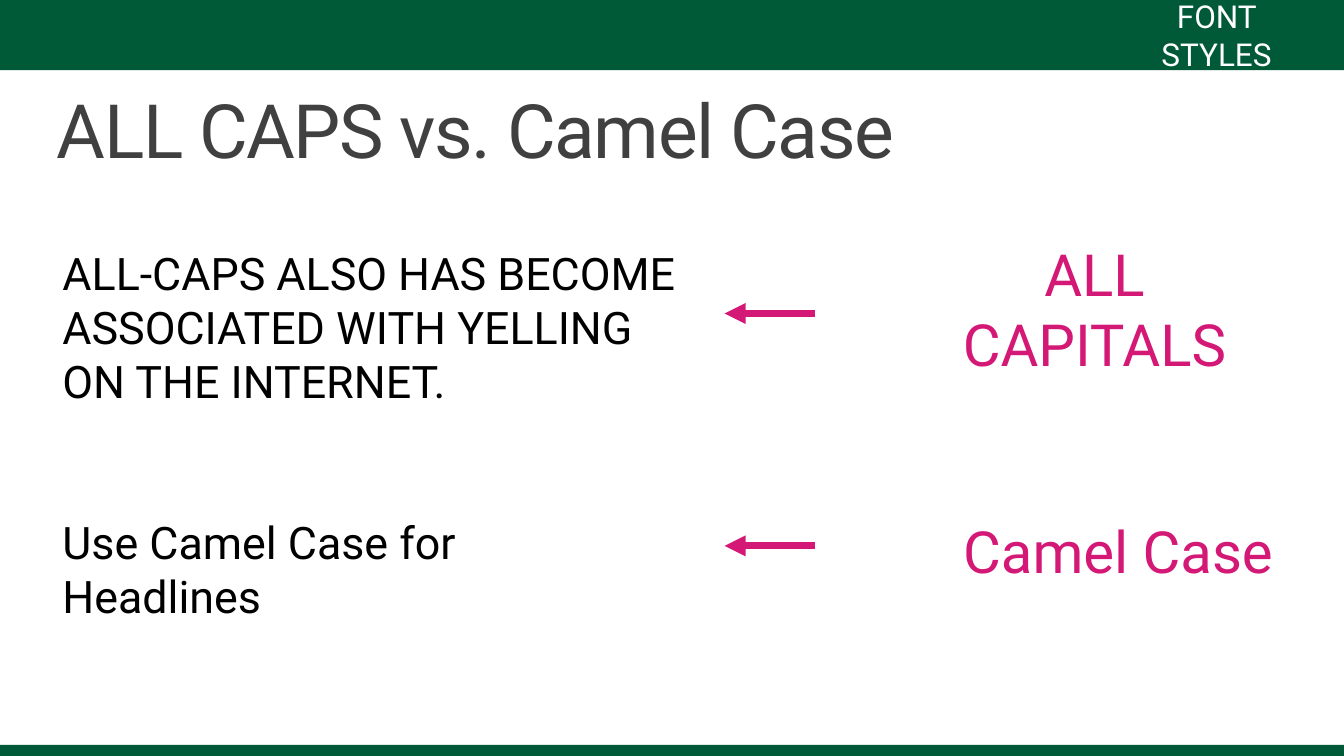
from lxml import etree
from pptx import Presentation
from pptx.dml.color import RGBColor
from pptx.enum.shapes import MSO_CONNECTOR, MSO_SHAPE
from pptx.enum.text import MSO_ANCHOR, MSO_AUTO_SIZE, PP_ALIGN
from pptx.oxml.ns import qn
from pptx.util import Inches, Pt

COLORS = {
    "green": "005A38",
    "pink": "D31876",
    "title": "404040",
    "black": "000000",
    "white": "FFFFFF",
}


def rgb(name):
    return RGBColor.from_string(COLORS[name])


def set_text(sp, text, size, color, align=PP_ALIGN.LEFT, wrap=True):
    tf = sp.text_frame
    tf.text = text
    tf.word_wrap = wrap
    tf.auto_size = MSO_AUTO_SIZE.SHAPE_TO_FIT_TEXT
    tf.vertical_anchor = MSO_ANCHOR.MIDDLE
    tf.margin_left = tf.margin_right = Inches(0.06)
    tf.margin_top = tf.margin_bottom = Inches(0.06)
    p = tf.paragraphs[0]
    p.alignment = align
    p.font.name = "Roboto"
    p.font.size = Pt(size)
    p.font.color.rgb = rgb(color)
    return p


prs = Presentation()
prs.slide_width = Inches(26.67)
prs.slide_height = Inches(15)
s = prs.slides.add_slide(prs.slide_layouts[5])
s.background.fill.solid()
s.background.fill.fore_color.rgb = rgb("white")

# Title
title = s.shapes.title
title.left, title.top = Inches(1.07), Inches(1.76)
title.width, title.height = Inches(24.28), Inches(1.92)
p = set_text(title, "ALL CAPS vs. Camel Case", 107, "title")
p.line_spacing = 0.8
p.runs[0].font._element.set("spc", "-210")

# Header and footer bars
for top, height in [(0, 1.39), (14.78, 0.22)]:
    bar = s.shapes.add_shape(
        MSO_SHAPE.RECTANGLE, 0, Inches(top), prs.slide_width, Inches(height))
    bar.shadow.inherit = False
    bar.fill.solid()
    bar.fill.fore_color.rgb = rgb("green")
    bar.line.fill.background()

# Advice on the left
for text, top, width, height in [
    ("ALL-CAPS ALSO HAS BECOME ASSOCIATED WITH YELLING ON THE INTERNET.",
     4.82, 12.53, 3.32),
    ("Use Camel Case for Headlines", 10.16, 10.44, 2.25),
]:
    advice = s.shapes.add_textbox(
        Inches(1.18), Inches(top), Inches(width), Inches(height))
    set_text(advice, text, 64, "black")

# Style names on the right and the section label in the header
for text, left, top, width, height, size, color in [
    ("ALL CAPITALS", 17.98, 5.36, 7.48, 1.51, 83, "pink"),
    ("Camel Case", 18.89, 10.16, 6.6, 1.51, 83, "pink"),
    ("FONT STYLES", 22.13, 0.26, 4.02, 0.86, 45, "white"),
]:
    label = s.shapes.add_textbox(
        Inches(left), Inches(top), Inches(width), Inches(height))
    set_text(label, text, size, color, PP_ALIGN.CENTER, wrap=False)

# Arrows from style name to advice
for y in (6.22, 10.83):
    arrow = s.shapes.add_connector(
        MSO_CONNECTOR.STRAIGHT, Inches(16.17), Inches(y), Inches(14.38), Inches(y))
    arrow.line.color.rgb = rgb("pink")
    arrow.line.width = Pt(10)
    etree.SubElement(arrow.line._get_or_add_ln(), qn("a:tailEnd"), type="triangle")
    etree.SubElement(arrow._element.spPr, qn("a:effectLst"))

prs.save("out.pptx")
